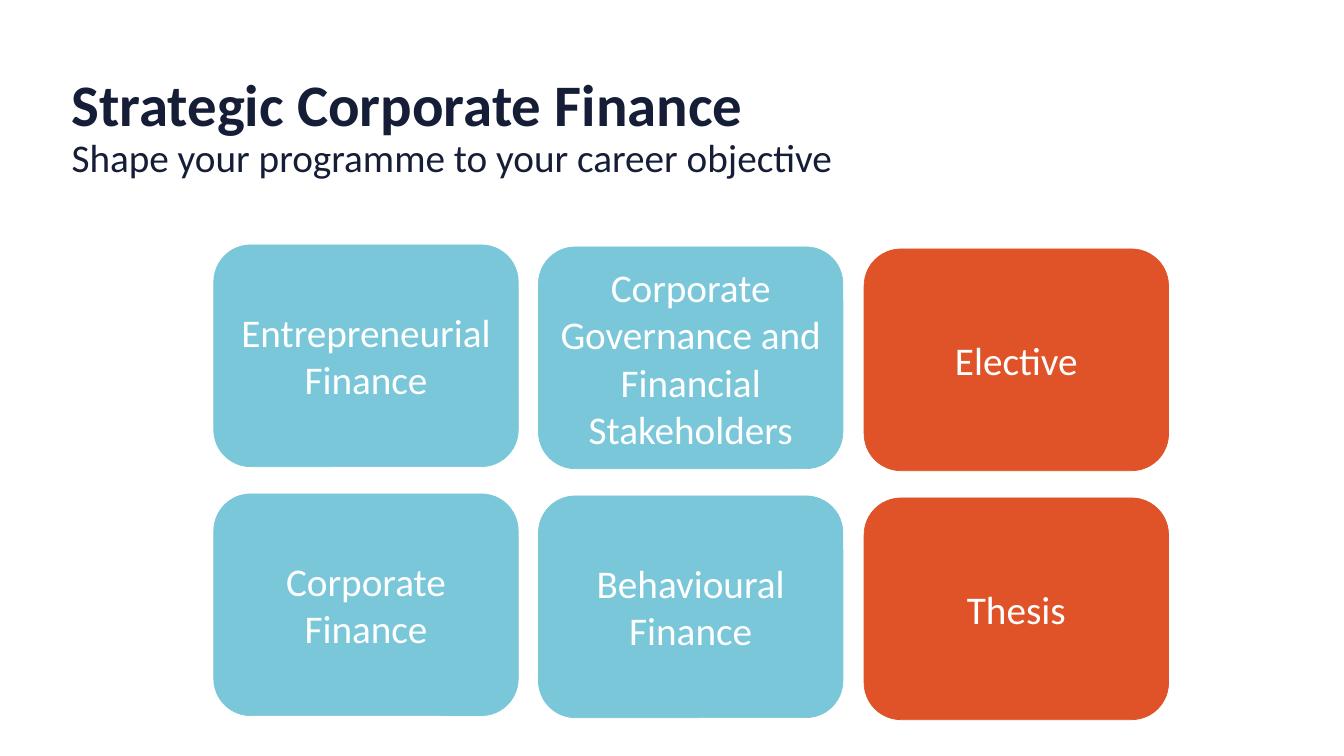
import dataclasses

import pptx
import pptx.dml.color
import pptx.enum.shapes
import pptx.enum.text
import pptx.util

PX = 9144  # EMU per px, 100 px to the inch
FONT = "Calibri"
NAVY, TEAL, ORANGE, WHITE = "151D37", "79C7D9", "E05329", "FFFFFF"
CARD_WIDTH, CARD_HEIGHT, ROW_PITCH = 302, 220, 247


@dataclasses.dataclass(frozen=True)
class CourseColumn:
    left: int
    top: int
    colour: str
    courses: tuple[str, ...]


COLUMNS = (
    CourseColumn(212, 243, TEAL, ("Entrepreneurial Finance", "Corporate Finance")),
    CourseColumn(534, 245, TEAL, ("Corporate Governance and Financial Stakeholders",
                                  "Behavioural Finance")),
    CourseColumn(857, 247, ORANGE, ("Elective", "Thesis")),
)


def px(length: int) -> pptx.util.Emu:
    return pptx.util.Emu(length * PX)


def rgb(colour: str) -> pptx.dml.color.RGBColor:
    return pptx.dml.color.RGBColor.from_string(colour)


def add_run(paragraph, text: str, size: int, colour: str, bold: bool = False) -> None:
    run = paragraph.add_run()
    run.text = text
    run.font.name = FONT
    run.font.size = pptx.util.Pt(size)
    run.font.bold = bold
    run.font.color.rgb = rgb(colour)


def add_card(slide, left: int, top: int, colour: str, course: str) -> None:
    card = slide.shapes.add_shape(
        pptx.enum.shapes.MSO_SHAPE.ROUNDED_RECTANGLE,
        px(left), px(top), px(CARD_WIDTH), px(CARD_HEIGHT))
    card.shadow.inherit = False
    card.fill.solid()
    card.fill.fore_color.rgb = rgb(colour)
    card.line.color.rgb = rgb(colour)
    card.line.width = pptx.util.Pt(0.5)
    frame = card.text_frame
    frame.word_wrap = True
    frame.vertical_anchor = pptx.enum.text.MSO_ANCHOR.MIDDLE
    paragraph = frame.paragraphs[0]
    paragraph.alignment = pptx.enum.text.PP_ALIGN.CENTER
    add_run(paragraph, course, 28, WHITE)


def add_heading(slide, title: str, subtitle: str) -> None:
    frame = slide.shapes.add_textbox(px(71), px(75), px(1063), px(62)).text_frame
    frame.word_wrap = True
    frame.margin_left = frame.margin_right = 0
    frame.margin_top = frame.margin_bottom = 0
    title_line, subtitle_line = frame.paragraphs[0], frame.add_paragraph()
    title_line.line_spacing = subtitle_line.line_spacing = 0.9
    add_run(title_line, title, 42, NAVY, bold=True)
    add_run(subtitle_line, subtitle, 28, NAVY)


def main() -> None:
    presentation = pptx.Presentation()
    presentation.slide_width, presentation.slide_height = px(1333), px(750)
    slide = presentation.slides.add_slide(presentation.slide_layouts[6])

    # Course cards, column by column
    for column in COLUMNS:
        for row, course in enumerate(column.courses):
            add_card(slide, column.left, column.top + row * ROW_PITCH,
                     column.colour, course)

    # Title and subtitle
    add_heading(slide, "Strategic Corporate Finance",
                "Shape your programme to your career objective")

    presentation.save("out.pptx")


if __name__ == "__main__":
    main()
